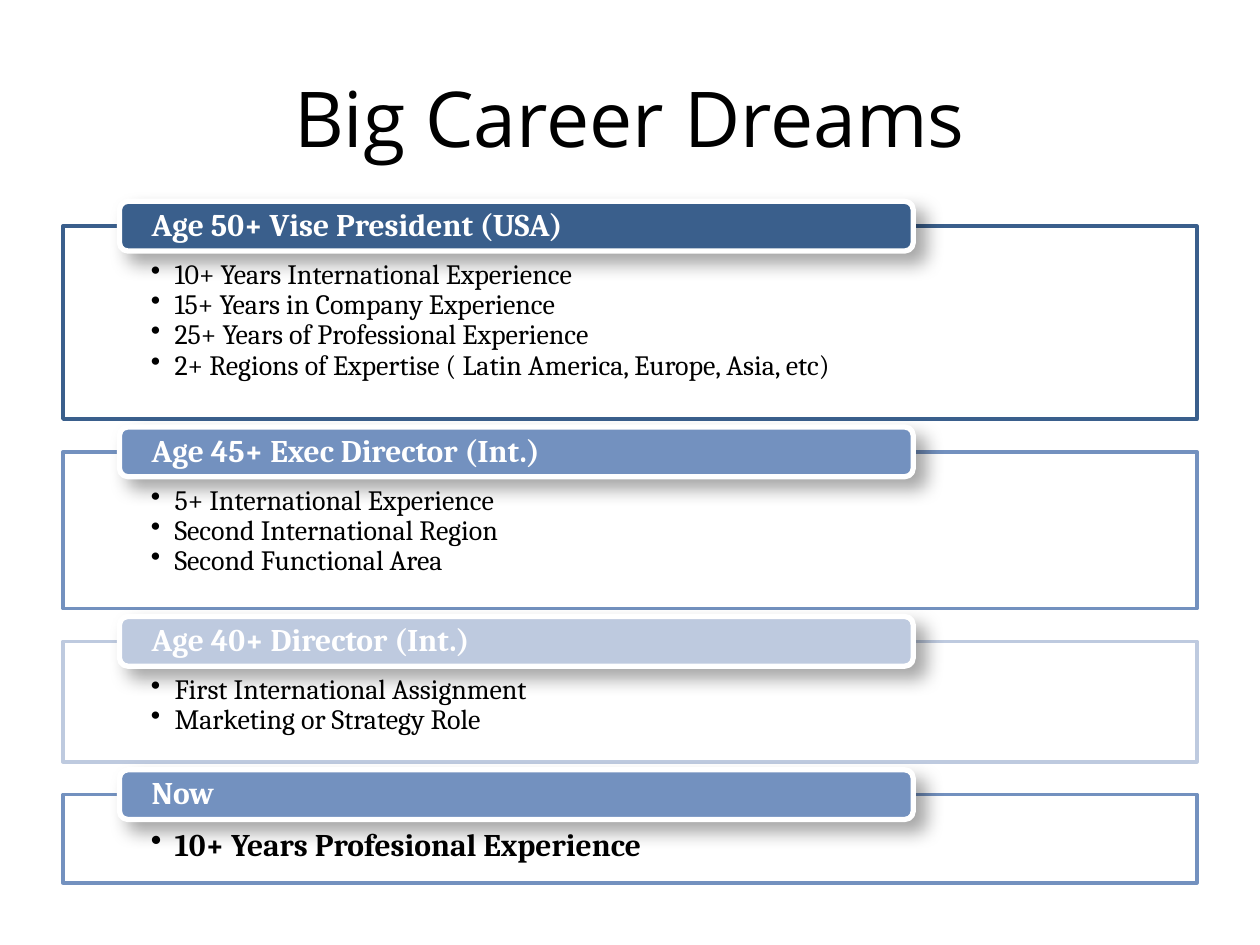
from lxml import etree
from pptx import Presentation
from pptx.dml.color import RGBColor
from pptx.enum.shapes import MSO_SHAPE
from pptx.enum.text import MSO_ANCHOR, PP_ALIGN
from pptx.oxml.ns import qn
from pptx.util import Cm, Pt

RECTANGLE, ROUNDED = MSO_SHAPE.RECTANGLE, MSO_SHAPE.ROUNDED_RECTANGLE
TOP, MIDDLE = MSO_ANCHOR.TOP, MSO_ANCHOR.MIDDLE
LEFT, CENTER = PP_ALIGN.LEFT, PP_ALIGN.CENTER

BLACK = RGBColor(0x00, 0x00, 0x00)
WHITE = RGBColor(0xFF, 0xFF, 0xFF)
NAVY = RGBColor(0x3A, 0x5F, 0x8C)
BLUE = RGBColor(0x73, 0x91, 0xBF)
PALE = RGBColor(0xBE, 0xCA, 0xDF)

TITLE_FONT = {"name": "Open Sans", "size": Pt(44)}
HEADING_FONT = {"name": "Cambria", "size": Pt(18), "bold": True}
ITEM_FONT = {"name": "Cambria", "size": Pt(16), "bold": False}

FIRST_TOP, STAGE_GAP = 4.56, 0.66
STAGES = [
    ("Age 50+ Vise President (USA)", NAVY, 3.89, ITEM_FONT, [
        "10+ Years International Experience",
        "15+ Years in Company Experience",
        "25+ Years of Professional Experience",
        "2+ Regions of Expertise ( Latin America, Europe, Asia, etc)"]),
    ("Age 45+ Exec Director (Int.)", BLUE, 3.16, ITEM_FONT, [
        "5+ International Experience",
        "Second International Region",
        "Second Functional Area"]),
    ("Age 40+ Director (Int.)", PALE, 2.43, ITEM_FONT, [
        "First International Assignment",
        "Marketing or Strategy Role"]),
    ("Now", BLUE, 1.78, HEADING_FONT, [
        "10+ Years Profesional Experience"]),
]


def set_attributes(target, values):
    for name, value in values.items():
        setattr(target, name, value)


def set_frame(frame, anchor, side, top, bottom):
    set_attributes(frame, {
        "word_wrap": True, "vertical_anchor": anchor,
        "margin_left": Cm(side), "margin_right": Cm(side),
        "margin_top": Cm(top), "margin_bottom": Cm(bottom)})


def format_paragraph(paragraph, text, font, color, align=LEFT, spacing=0.9):
    paragraph.text = text
    set_attributes(paragraph, {"alignment": align, "line_spacing": spacing})
    set_attributes(paragraph.font, font)
    paragraph.font.color.rgb = color


def add_bullet(paragraph):
    properties = paragraph._p.get_or_add_pPr()
    properties.set("marL", str(Cm(0.48)))
    properties.set("indent", str(Cm(-0.48)))
    etree.SubElement(properties, qn("a:buChar"), char="•")


def add_block(slide, kind, box, fill, outline, width):
    block = slide.shapes.add_shape(kind, *map(Cm, box))
    block.shadow.inherit = False
    block.fill.solid()
    block.fill.fore_color.rgb = fill
    block.line.color.rgb = outline
    block.line.width = Pt(width)
    return block


def set_opacity(color, percent):
    etree.SubElement(color, qn("a:alpha"), val=str(percent * 1000))


def add_drop_shadow(block):
    effects = block._element.spPr.find(qn("a:effectLst"))
    shadow = etree.SubElement(
        effects, qn("a:outerShdw"), blurRad=str(Pt(10.2)), dist=str(Pt(8)),
        dir=str(45 * 60000), algn="tl", rotWithShape="0")
    set_opacity(etree.SubElement(shadow, qn("a:srgbClr"), val=str(BLACK)), 35)


def add_title(slide, text):
    title = slide.shapes.add_textbox(Cm(1.27), Cm(0.76), Cm(22.86), Cm(3.18))
    set_frame(title.text_frame, MIDDLE, 0.25, 0.13, 0.13)
    format_paragraph(title.text_frame.paragraphs[0], text, TITLE_FONT, BLACK, CENTER, 1.0)


def add_panel(slide, top, height, color, font, items):
    panel = add_block(slide, RECTANGLE, (1.27, top, 22.86, height), WHITE, color, 2)
    set_opacity(panel._element.spPr.find(qn("a:solidFill"))[0], 90)
    frame = panel.text_frame
    set_frame(frame, TOP, 1.77, 0.69, 0.3)
    for index, item in enumerate(items):
        paragraph = frame.add_paragraph() if index else frame.paragraphs[0]
        add_bullet(paragraph)
        format_paragraph(paragraph, item, font, BLACK)


def add_heading(slide, top, color, text):
    heading = add_block(slide, ROUNDED, (2.41, top - 0.5, 16, 1), color, WHITE, 3)
    add_drop_shadow(heading)
    set_frame(heading.text_frame, MIDDLE, 0.6, 0, 0)
    format_paragraph(heading.text_frame.paragraphs[0], text, HEADING_FONT, WHITE)


def main():
    deck = Presentation()
    deck.slide_width, deck.slide_height = Cm(25.4), Cm(19.05)
    slide = deck.slides.add_slide(deck.slide_layouts[6])
    add_title(slide, "Big Career Dreams")
    top = FIRST_TOP
    for heading, color, height, font, items in STAGES:
        add_panel(slide, top, height, color, font, items)
        add_heading(slide, top, color, heading)
        top += height + STAGE_GAP
    deck.save("out.pptx")


if __name__ == "__main__":
    main()
